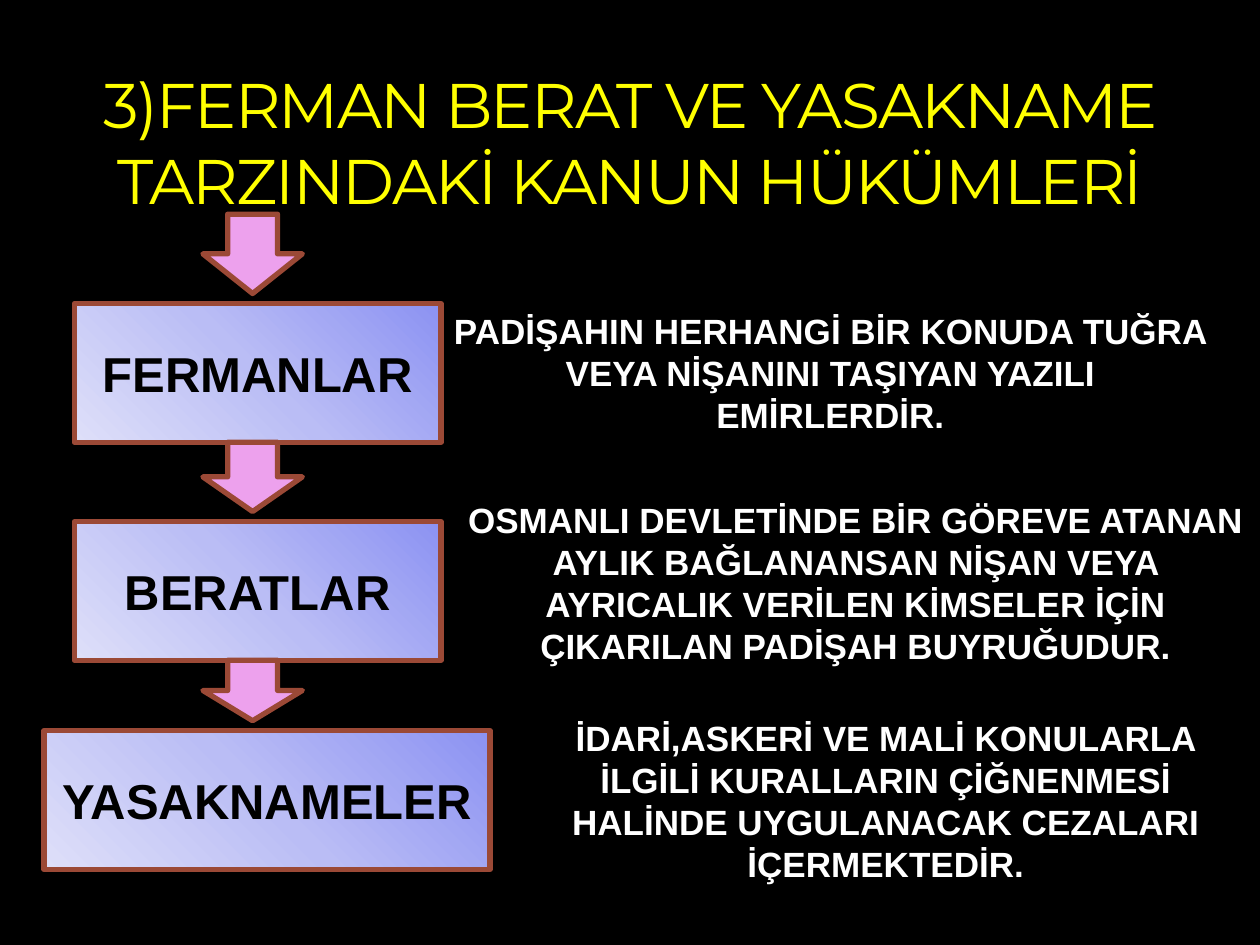
from pptx import Presentation
from pptx.dml.color import RGBColor
from pptx.enum.shapes import MSO_SHAPE as Shape
from pptx.enum.text import MSO_ANCHOR as Anchor, MSO_AUTO_SIZE as AutoSize, PP_ALIGN as Align
from pptx.oxml import parse_xml
from pptx.oxml.ns import nsdecls
from pptx.util import Inches, Pt

HEADING = "3)FERMAN BERAT VE YASAKNAME TARZINDAKİ KANUN HÜKÜMLERİ"
DECREES = [
    dict(term="FERMANLAR", top=2.41, box=(0.59, 2.91), note=(3.5, 2.41, 6.18, 1.11),
         meaning="PADİŞAHIN HERHANGİ BİR KONUDA TUĞRA VEYA NİŞANINI TAŞIYAN YAZILI EMİRLERDİR."),
    dict(term="BERATLAR", top=4.14, box=(0.59, 2.91), note=(3.58, 3.91, 6.42, 1.45),
         meaning="OSMANLI DEVLETİNDE BİR GÖREVE ATANAN AYLIK BAĞLANANSAN NİŞAN VEYA "
                 "AYRICALIK VERİLEN KİMSELER İÇİN ÇIKARILAN PADİŞAH BUYRUĞUDUR."),
    dict(term="YASAKNAMELER", top=5.8, box=(0.35, 3.54), note=(4.06, 5.64, 5.94, 1.45),
         meaning="İDARİ,ASKERİ VE MALİ KONULARLA İLGİLİ KURALLARIN ÇİĞNENMESİ "
                 "HALİNDE UYGULANACAK CEZALARI İÇERMEKTEDİR."),
]
THEME = dict(
    background="000000", heading="FFFF00", heading_edge="585E76", term="000000",
    meaning="FFFFFF", arrow="EDA1ED", border="9B4936",
    glow=[(0, "8C92F2"), (50, "BABDF5"), (100, "DEDFF9")],
    heading_font="Montserrat", body_font="Arial",
    heading_size=36, term_size=28, meaning_size=20, border_width=3,
)
WIDTH, HEIGHT = 10, 7.5
BOX_HEIGHT = 1.1
ARROW_LEFT, ARROW_WIDTH, ARROW_START, ARROW_GAP = 1.61, 0.79, 1.7, 0.08


def color(key):
    return RGBColor.from_string(THEME[key])


def write(shape, text, role, font, bold, anchor):
    frame = shape.text_frame
    frame.text = text
    frame.word_wrap = True
    frame.vertical_anchor = anchor
    line = frame.paragraphs[0]
    line.alignment = Align.CENTER
    run = line.runs[0]
    run.font.name = THEME[font]
    run.font.size = Pt(THEME[role + "_size"])
    run.font.bold = bold
    run.font.color.rgb = color(role)
    return run


def add_bordered(slide, kind, *place):
    shape = slide.shapes.add_shape(kind, *map(Inches, place))
    shape.shadow.inherit = False
    shape.line.color.rgb = color("border")
    shape.line.width = Pt(THEME["border_width"])
    return shape


def fill_with_glow(shape):
    shape.fill.gradient()
    gradient = shape._element.spPr.find("{*}gradFill")
    stops = "".join(f'<a:gs pos="{share * 1000}"><a:srgbClr val="{shade}"/></a:gs>'
                    for share, shade in THEME["glow"])
    gradient.getparent().replace(gradient, parse_xml(
        f'<a:gradFill {nsdecls("a")} rotWithShape="1"><a:gsLst>{stops}</a:gsLst>'
        '<a:path path="circle"><a:fillToRect l="100000" b="100000"/></a:path></a:gradFill>'))


def add_heading(slide):
    title = slide.shapes.title
    title.left, title.top, title.width, title.height = map(Inches, (0, 0.44, WIDTH, 1.33))
    run = write(title, HEADING, "heading", "heading_font", False, Anchor.BOTTOM)
    title.text_frame.auto_size = AutoSize.NONE
    properties = run.font._element
    properties.set("spc", "-100")
    properties.insert(0, parse_xml(
        f'<a:ln {nsdecls("a")} w="{Pt(0.25)}"><a:solidFill><a:srgbClr val="{THEME["heading_edge"]}">'
        '<a:alpha val="25000"/></a:srgbClr></a:solidFill></a:ln>'))


def add_decree(slide, decree, arrow_top):
    left, width = decree["box"]
    box = add_bordered(slide, Shape.FLOWCHART_PROCESS, left, decree["top"], width, BOX_HEIGHT)
    fill_with_glow(box)
    write(box, decree["term"], "term", "body_font", True, Anchor.MIDDLE)

    arrow = add_bordered(slide, Shape.DOWN_ARROW, ARROW_LEFT, arrow_top, ARROW_WIDTH,
                         decree["top"] - ARROW_GAP - arrow_top)
    arrow.fill.solid()
    arrow.fill.fore_color.rgb = color("arrow")

    note = slide.shapes.add_textbox(*map(Inches, decree["note"]))
    write(note, decree["meaning"], "meaning", "body_font", True, Anchor.TOP)
    note.text_frame.auto_size = AutoSize.SHAPE_TO_FIT_TEXT


def main():
    deck = Presentation()
    deck.slide_width, deck.slide_height = Inches(WIDTH), Inches(HEIGHT)
    slide = deck.slides.add_slide(deck.slide_layouts[5])
    slide.background.fill.solid()
    slide.background.fill.fore_color.rgb = color("background")
    add_heading(slide)
    arrow_top = ARROW_START
    for decree in DECREES:
        add_decree(slide, decree, arrow_top)
        arrow_top = decree["top"] + BOX_HEIGHT
    deck.save("out.pptx")


if __name__ == "__main__":
    main()
